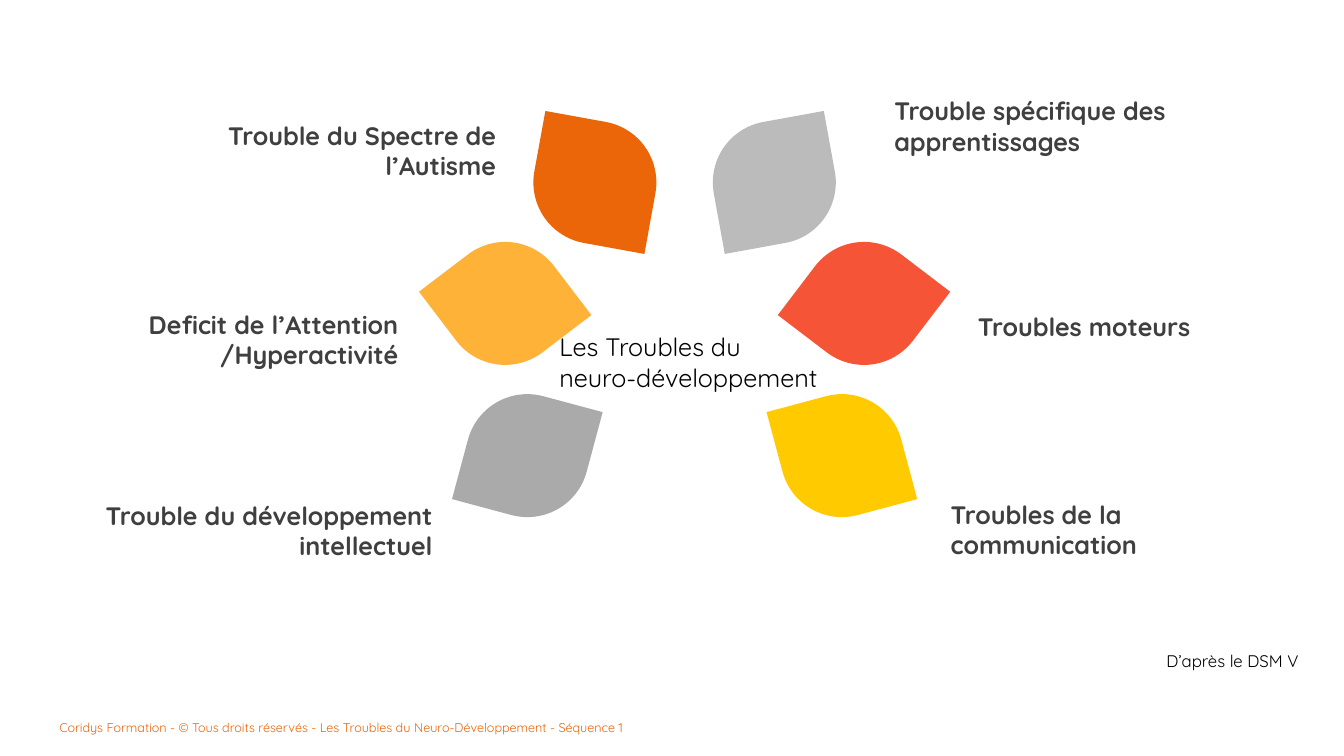
from collections import namedtuple

from pptx import Presentation
from pptx.dml.color import RGBColor
from pptx.enum.shapes import MSO_SHAPE
from pptx.enum.text import PP_ALIGN
from pptx.util import Inches, Pt

WIDTH, HEIGHT = 13.33, 7.5
COL, ROW = WIDTH / 40, HEIGHT / 30  # grid of 40 columns by 30 rows
FONT = "Quicksand"
COLORS = {
    "orange": "EB6608",
    "amber": "FFB238",
    "grey": "AAAAAA",
    "light_grey": "BBBBBB",
    "red": "F55536",
    "yellow": "FFCB00",
    "label": "3F3F3F",
    "black": "000000",
}

# Left and width in columns, top and height in rows
Box = namedtuple("Box", "left top width height")

PETAL_SIZE = 1.22 / COL
# Offset from the axis, top in the flower, rotation, right and left colours
PETAL_PAIRS = [
    (2.67, 0, -10.3, "light_grey", "orange"),
    (5.34, 4.8, 37.3, "red", "amber"),
    (4.68, 10.84, 75, "yellow", "grey"),
]
# Indent and top in the label column, rows of height, wording
LEFT_LABELS = [
    (2.91, 0, 2.84, "Trouble du Spectre de l’Autisme"),
    (0, 7.52, 2.84, "Deficit de l’Attention /Hyperactivité"),
    (1.02, 15.08, 2.84, "Trouble du développement intellectuel"),
]
RIGHT_LABELS = [
    (0, 0, 2.84, "Trouble spécifique des apprentissages"),
    (2.49, 8.56, 1.6, "Troubles moteurs"),
    (1.68, 16, 2.84, "Troubles de la communication"),
]


def color(name):
    return RGBColor.from_string(COLORS[name])


def emu(box):
    return (Inches(box.left * COL), Inches(box.top * ROW),
            Inches(box.width * COL), Inches(box.height * ROW))


def add_text(slide, box, text, size, ink="black", bold=False, align=PP_ALIGN.LEFT):
    frame = slide.shapes.add_textbox(*emu(box)).text_frame
    frame.word_wrap = True
    frame.text = text
    for paragraph in frame.paragraphs:
        paragraph.alignment = align
        for run in paragraph.runs:
            run.font.name = FONT
            run.font.size = Pt(size)
            run.font.bold = bold
            run.font.color.rgb = color(ink)


def add_petal(slide, box, rotation, fill, rounding):
    petal = slide.shapes.add_shape(MSO_SHAPE.ROUND_2_DIAG_RECTANGLE, *emu(box))
    petal.adjustments[0], petal.adjustments[1] = rounding
    petal.rotation = rotation % 360
    petal.shadow.inherit = False
    petal.fill.solid()
    petal.fill.fore_color.rgb = color(fill)
    petal.line.fill.background()


def add_flower(slide, box):
    """Three petals on each side of the vertical axis of the box."""
    axis = box.left + box.width / 2
    for offset, top, rotation, right, left in PETAL_PAIRS:
        for side, fill, rounding in ((1, right, (0.5, 0)), (-1, left, (0, 0.5))):
            place = Box(axis + side * offset - PETAL_SIZE / 2, box.top + top,
                        PETAL_SIZE, PETAL_SIZE * COL / ROW)
            add_petal(slide, place, side * rotation, fill, rounding)


def add_labels(slide, box, labels, align):
    for indent, top, height, wording in labels:
        place = Box(box.left + indent, box.top + top, box.width, height)
        add_text(slide, place, wording, 18, "label", True, align)


def main():
    prs = Presentation()
    prs.slide_width, prs.slide_height = Inches(WIDTH), Inches(HEIGHT)
    slide = prs.slides.add_slide(prs.slide_layouts[6])

    # Footer
    add_text(slide, Box(1.47, 28.36, 36.22, 1),
             "Coridys Formation - © Tous droits réservés - "
             "Les Troubles du Neuro-Développement - Séquence 1", 9, "orange")

    # Petals and their labels
    add_flower(slide, Box(13.2, 4.8, 14.35, 15.72))
    add_labels(slide, Box(26.32, 3.6, 10.65, 18.84), RIGHT_LABELS, PP_ALIGN.LEFT)
    add_labels(slide, Box(1.47, 4.56, 10.68, 17.92), LEFT_LABELS, PP_ALIGN.RIGHT)

    # Central topic and source
    add_text(slide, Box(16.35, 12.96, 9.12, 2.84),
             "Les Troubles du\nneuro-développement", 18)
    add_text(slide, Box(34.42, 25.64, 5.04, 1.2), "D’après le DSM V", 12)

    prs.save("out.pptx")


if __name__ == "__main__":
    main()
